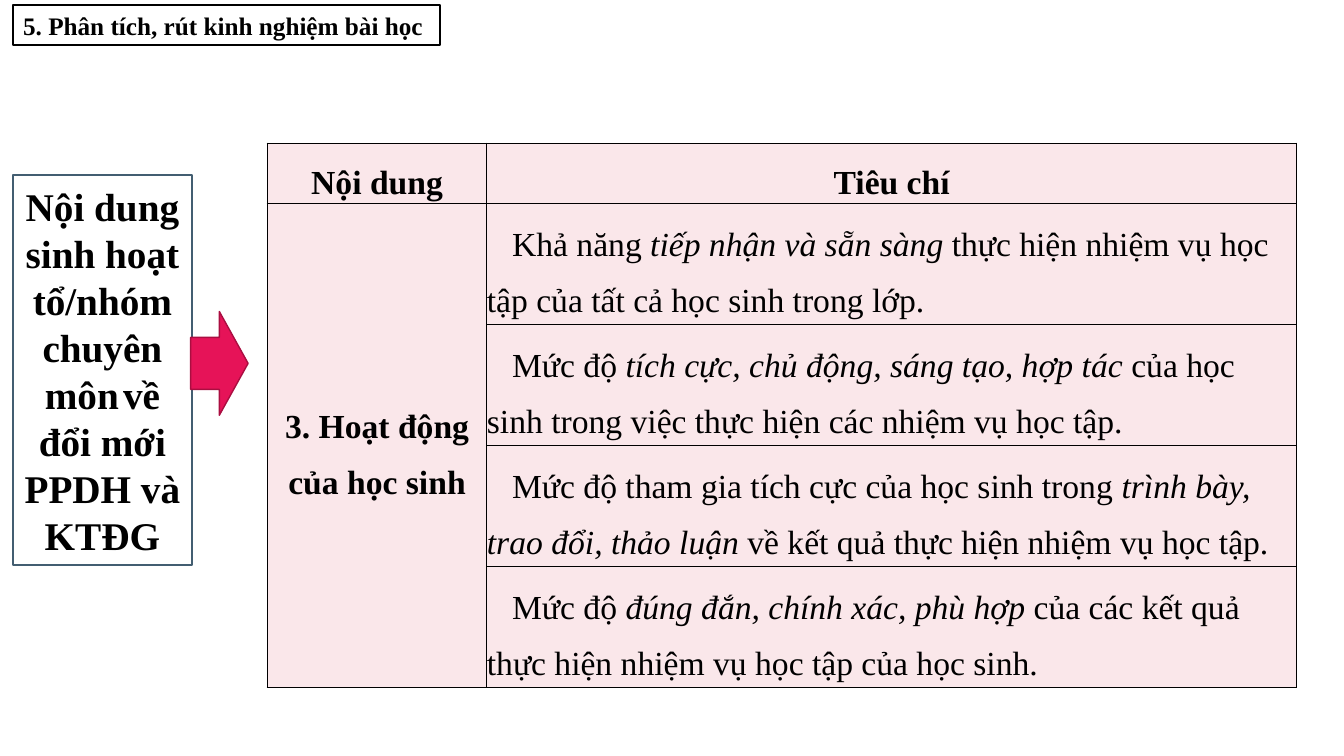
from lxml import etree
from pptx import Presentation
from pptx.dml.color import RGBColor
from pptx.enum.shapes import MSO_SHAPE
from pptx.enum.text import MSO_ANCHOR, MSO_AUTO_SIZE, PP_ALIGN
from pptx.oxml.ns import qn
from pptx.util import Inches, Pt

RECT = MSO_SHAPE.RECTANGLE
ARROW = MSO_SHAPE.RIGHT_ARROW
MIDDLE = MSO_ANCHOR.MIDDLE
GROW = MSO_AUTO_SIZE.SHAPE_TO_FIT_TEXT
LEFT, CENTER = PP_ALIGN.LEFT, PP_ALIGN.CENTER

WHITE, BLACK = "FFFFFF", "000000"
SLATE, PINK, WINE, BLUSH = "435E71", "E61358", "AA0E41", "FAE7EA"

HEADS = ["Nội dung", "Tiêu chí"]
TOPIC = "3. Hoạt động của học sinh"
RULES = [
    ("Khả năng ", "tiếp nhận và sẵn sàng ",
     "thực hiện nhiệm vụ học tập của tất cả học sinh trong lớp."),
    ("Mức độ ", "tích cực, chủ động, sáng tạo, hợp tác ",
     "của học sinh trong việc thực hiện các nhiệm vụ học tập."),
    ("Mức độ tham gia tích cực của học sinh trong ", "trình bày, trao đổi, thảo luận ",
     "về kết quả thực hiện nhiệm vụ học tập."),
    ("Mức độ ", "đúng đắn, chính xác, phù hợp ",
     "của các kết quả thực hiện nhiệm vụ học tập của học sinh."),
]


def color(code):
    return RGBColor.from_string(code)


class Deck:
    font = "Times New Roman"

    def __init__(self):
        self.show = Presentation()
        self.show.slide_width = Inches(13.33)
        self.show.slide_height = Inches(7.5)
        self.slide = self.show.slides.add_slide(self.show.slide_layouts[6])

    def wide(self, share):
        return int(self.show.slide_width * share / 100)

    def high(self, share):
        return int(self.show.slide_height * share / 100)

    def place(self, left, top, width, height):
        return self.wide(left), self.high(top), self.wide(width), self.high(height)

    def add_run(self, para, text, size, bold=False, italic=False):
        run = para.add_run()
        run.text = text
        font = run.font
        font.name, font.size = self.font, Pt(size)
        font.bold, font.italic = bold, italic
        font.color.rgb = color(BLACK)

    def shape(self, kind, area, fill, line, weight):
        item = self.slide.shapes.add_shape(kind, *self.place(*area))
        item.shadow.inherit = False
        if fill:
            item.fill.solid()
            item.fill.fore_color.rgb = color(fill)
        else:
            item.fill.background()
        item.line.color.rgb = color(line)
        item.line.width = Pt(weight)
        return item

    def box(self, area, fill, line, runs, align):
        frame = self.shape(RECT, area, fill, line, 1.5).text_frame
        frame.word_wrap = True
        frame.auto_size = GROW
        frame.vertical_anchor = MIDDLE
        para = frame.paragraphs[0]
        para.alignment = align
        for text, size in runs:
            self.add_run(para, text, size, bold=True)

    def table(self, left, top, cols, rows):
        area = self.place(left, top, sum(cols), sum(rows))
        grid = self.slide.shapes.add_table(len(rows), len(cols), *area).table
        grid.first_row = grid.horz_banding = False
        for col, share in zip(grid.columns, cols):
            col.width = self.wide(share)
        for row, share in zip(grid.rows, rows):
            row.height = self.high(share)
            for cell in row.cells:
                self.frame(cell)
        return grid

    def frame(self, cell):
        props = cell._tc.get_or_add_tcPr()
        for side in ("lnL", "lnR", "lnT", "lnB"):
            edge = etree.SubElement(props, qn("a:" + side), w=str(Pt(1)))
            fill = etree.SubElement(edge, qn("a:solidFill"))
            etree.SubElement(fill, qn("a:srgbClr"), val=BLACK)
        cell.fill.solid()
        cell.fill.fore_color.rgb = color(BLUSH)
        cell.vertical_anchor = MIDDLE
        cell.margin_left = cell.margin_right = 0
        cell.margin_top = cell.margin_bottom = 0

    def para(self, cell, align):
        para = cell.text_frame.paragraphs[0]
        para.alignment = align
        para.line_spacing = 1.5
        para.space_before = para.space_after = Pt(6)
        return para

    def label(self, cell, text):
        self.add_run(self.para(cell, CENTER), text, 24, bold=True)

    def rule(self, cell, parts):
        para = self.para(cell, LEFT)
        props = para._p.get_or_add_pPr()
        props.set("marL", "0")
        props.set("indent", str(Inches(0.25)))
        for spot, text in enumerate(parts):
            self.add_run(para, text, 24, italic=spot == 1)


def main():
    deck = Deck()
    deck.box((0.98, 23.2, 13.28, 51.6), WHITE, SLATE, [
        ("Nội dung sinh hoạt tổ/nhóm chuyên môn", 28),
        (" ", 12),
        ("về đổi mới PPDH và KTĐG", 28),
    ], CENTER)
    deck.shape(ARROW, (14.18, 41.2, 4.28, 13.73), PINK, WINE, 1)
    deck.box((0.98, 0.67, 31.73, 5.33), None, BLACK,
             [("5. Phân tích, rút kinh nghiệm bài học", 18)], LEFT)

    grid = deck.table(19.88, 18.93, [16.35, 60.24], [8] + [16] * len(RULES))
    for col, text in enumerate(HEADS):
        deck.label(grid.cell(0, col), text)
    grid.cell(1, 0).merge(grid.cell(len(RULES), 0))
    deck.label(grid.cell(1, 0), TOPIC)
    for row, parts in enumerate(RULES, 1):
        deck.rule(grid.cell(row, 1), parts)
    deck.show.save("out.pptx")


if __name__ == "__main__":
    main()
